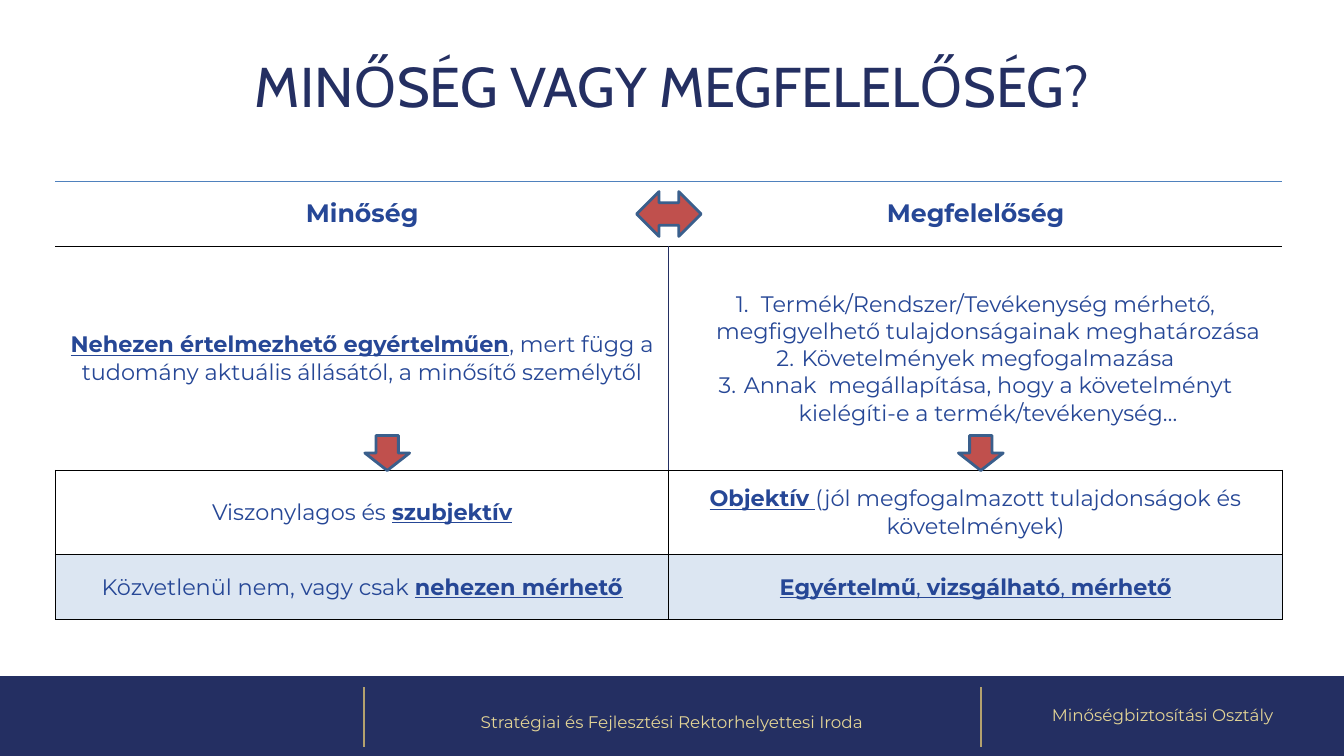
import pptx
import pptx.util
import pptx.dml.color
import pptx.enum.shapes
import pptx.enum.text
import pptx.oxml.ns
from lxml import etree
from dataclasses import dataclass

Pt = pptx.util.Pt
RGB = pptx.dml.color.RGBColor.from_string
SHAPE = pptx.enum.shapes.MSO_SHAPE
MIDDLE = pptx.enum.text.MSO_ANCHOR.MIDDLE
CENTER = pptx.enum.text.PP_ALIGN.CENTER


@dataclass(frozen=True)
class Theme:
    navy: str = "242F62"
    blue: str = "264796"
    sky: str = "4F81BD"
    pale: str = "DCE6F2"
    gold: str = "B3A16E"
    sand: str = "E3D496"
    red: str = "C0504D"
    steel: str = "3A5F8C"
    black: str = "000000"
    head: str = "Cabin"
    text: str = "Montserrat"
    title: int = 40
    label: int = 18
    body: int = 16
    foot: int = 12


THEME = Theme()

# Each cell is a list of paragraphs, each a list of (words, marks): b bold, u underline
ROWS = [
    [[[("Minőség", "b")]], [[("Megfelelőség", "b")]]],
    [[[("Nehezen értelmezhető egyértelműen", "bu"),
       (", mert függ a tudomány aktuális állásától, a minősítő személytől", "")]],
     [[("Termék/Rendszer/Tevékenység mérhető, megfigyelhető tulajdonságainak meghatározása", "")],
      [("Követelmények megfogalmazása", "")],
      [("Annak  megállapítása, hogy a követelményt kielégíti-e a termék/tevékenység…", "")]]],
    [[[("Viszonylagos és ", ""), ("szubjektív", "bu")]],
     [[("Objektív", "bu"), (" ", "u"), ("(jól megfogalmazott tulajdonságok és követelmények)", "")]]],
    [[[("Közvetlenül nem, vagy csak ", ""), ("nehezen mérhető", "bu")]],
     [[("Egyértelmű", "bu"), (", ", "u"), ("vizsgálható", "bu"), (", ", "u"), ("mérhető", "bu")]]],
]
HEIGHTS = [46.5, 160, 60, 46.5]


def write(frame, paras, font=THEME.text, size=THEME.body, color=THEME.blue,
          space=None, bullet=None, indent=0):
    """Fill a text frame; bullet is the tag of a bullet element."""
    frame.word_wrap = True
    for i, runs in enumerate(paras):
        para = frame.paragraphs[0] if i == 0 else frame.add_paragraph()
        if bullet:
            props = para._p.get_or_add_pPr()
            props.set("marL", str(Pt(indent)))
            props.set("indent", str(-Pt(indent)))
            mark = etree.SubElement(props, pptx.oxml.ns.qn(bullet))
            if bullet == "a:buAutoNum":
                mark.set("type", "arabicPeriod")
        para.alignment = CENTER
        para.space_before = Pt(0)
        if space:
            para.line_spacing = space
        for words, marks in runs:
            run = para.add_run()
            run.text = words
            run.font.name, run.font.size = font, Pt(size)
            run.font.bold, run.font.underline = "b" in marks, "u" in marks
            run.font.color.rgb = RGB(color)


def place(holder, box, words, **form):
    """Move a placeholder to its box, in front of the rest, and fill it."""
    holder.left, holder.top, holder.width, holder.height = map(Pt, box)
    holder.element.getparent().append(holder.element)
    frame = holder.text_frame
    frame.auto_size = pptx.enum.text.MSO_AUTO_SIZE.NONE
    frame.vertical_anchor = MIDDLE
    write(frame, [[(words, "")]], space=0.9, bullet="a:buNone", **form)


def draw(slide, kind, box, fill, line=None):
    shape = slide.shapes.add_shape(kind, *map(Pt, box))
    shape.shadow.inherit = False
    shape.fill.solid()
    shape.fill.fore_color.rgb = RGB(fill)
    if line:
        shape.line.color.rgb = RGB(line)
        shape.line.width = Pt(2)
    else:
        shape.line.fill.background()


def edge(cell, sides):
    """Set cell borders from a dict of side (L, R, T, B) to colour."""
    props = cell._tc.get_or_add_tcPr()
    for i, side in enumerate("LRTB"):
        line = etree.Element(pptx.oxml.ns.qn("a:ln" + side), w=str(Pt(1)))
        tint = sides.get(side)
        fill = etree.SubElement(line, pptx.oxml.ns.qn("a:solidFill" if tint else "a:noFill"))
        if tint:
            etree.SubElement(fill, pptx.oxml.ns.qn("a:srgbClr"), val=tint)
        props.insert(i, line)


def sides(row, col):
    """Border colours: open header, inner rule below it, then a full grid."""
    rule = dict.fromkeys("TB", THEME.black)
    if row == 0:
        rule["T"] = THEME.sky
    elif row == 1:
        rule["LR"[col == 0]] = THEME.navy
    else:
        rule.update(dict.fromkeys("LR", THEME.black))
    return rule


def grid(slide, box):
    left, top, width, height = box
    table = slide.shapes.add_table(len(ROWS), 2, *map(Pt, box)).table
    table.first_row = table.horz_banding = False
    for col in table.columns:
        col.width = Pt(width / 2)
    for r, cells in enumerate(ROWS):
        table.rows[r].height = Pt(HEIGHTS[r])
        for c, paras in enumerate(cells):
            cell = table.cell(r, c)
            cell.vertical_anchor = MIDDLE
            if r == len(ROWS) - 1:
                cell.fill.solid()
                cell.fill.fore_color.rgb = RGB(THEME.pale)
            else:
                cell.fill.background()
            edge(cell, sides(r, c))
            many = len(paras) > 1
            write(cell.text_frame, paras, size=THEME.body if r else THEME.label,
                  bullet="a:buAutoNum" if many else None, indent=18 if many else 0)

    # Arrows: one across the header, two down to the third row
    wide, high = 46, 32
    draw(slide, SHAPE.LEFT_RIGHT_ARROW,
         (left + (width - wide) / 2, top + (HEIGHTS[0] - high) / 2, wide, high),
         THEME.red, THEME.steel)
    base = top + HEIGHTS[0] + HEIGHTS[1]
    for x in (221, 645):
        draw(slide, SHAPE.DOWN_ARROW, (left + x, base - 25, 32, 25), THEME.red, THEME.steel)


def footer(slide, box):
    left, top, width, height = box
    draw(slide, SHAPE.RECTANGLE, box, THEME.navy)
    first, second = left + 260, left + 701
    for x in (first, second):
        line = slide.shapes.add_connector(
            pptx.enum.shapes.MSO_CONNECTOR.STRAIGHT,
            Pt(x), Pt(top + 8), Pt(x), Pt(top + 50.5))
        line.line.color.rgb = RGB(THEME.gold)
        line.line.width = Pt(1.5)
        etree.SubElement(line._element.spPr, pptx.oxml.ns.qn("a:effectLst"))
    form = dict(size=THEME.foot, color=THEME.sand)
    place(slide.placeholders[1], (first - 1, top + 5, second - first + 1, height),
          "Stratégiai és Fejlesztési Rektorhelyettesi Iroda", **form)
    place(slide.placeholders[2], (second, top, left + width - second, height),
          "Minőségbiztosítási Osztály", **form)


def main():
    deck = pptx.Presentation()
    deck.slide_width, deck.slide_height = Pt(960), Pt(540)
    slide = deck.slides.add_slide(deck.slide_layouts[3])
    place(slide.shapes.title, (66, 31, 828, 65), "MINŐSÉG VAGY MEGFELELŐSÉG?",
          font=THEME.head, size=THEME.title, color=THEME.navy)
    grid(slide, (39.6, 129.6, 876.4, sum(HEIGHTS)))
    footer(slide, (0, 483, 960, 57))
    deck.save("out.pptx")


if __name__ == "__main__":
    main()
